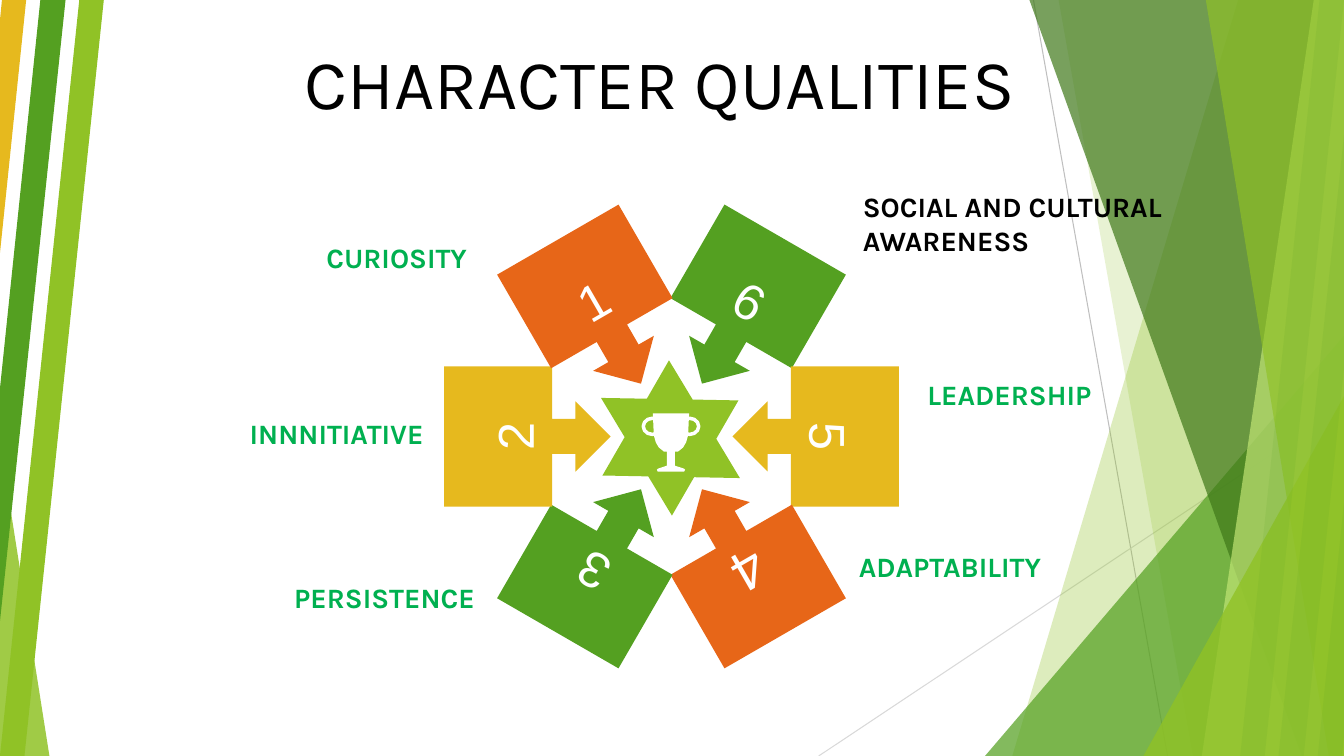
from math import cos, radians, sin

from lxml import etree
from pptx import Presentation
from pptx.dml.color import RGBColor
from pptx.enum.shapes import MSO_CONNECTOR, MSO_SHAPE
from pptx.enum.text import MSO_ANCHOR, PP_ALIGN
from pptx.oxml.ns import qn
from pptx.util import Inches, Pt

STRAIGHT = MSO_CONNECTOR.STRAIGHT
TRIANGLE, PARALLELOGRAM = MSO_SHAPE.ISOSCELES_TRIANGLE, MSO_SHAPE.PARALLELOGRAM
CALLOUT, STAR, OVAL = MSO_SHAPE.DOWN_ARROW_CALLOUT, MSO_SHAPE.STAR_6_POINT, MSO_SHAPE.OVAL
LEFT, CENTER, RIGHT = PP_ALIGN.LEFT, PP_ALIGN.CENTER, PP_ALIGN.RIGHT
TOP, MIDDLE = MSO_ANCHOR.TOP, MSO_ANCHOR.MIDDLE

COLORS = {
    "lime": "90C226", "green": "54A021", "forest": "3F7819", "pale": "C0E474",
    "gold": "E6B91E", "orange": "E76618", "label": "00B050", "black": "000000",
    "white": "FFFFFF", "gray": "BFBFBF", "silver": "D9D9D9",
}

# The grid has one-inch columns and rows
COLUMNS, ROWS = 13.33, 7.5

deck = Presentation()
deck.slide_width, deck.slide_height = Inches(COLUMNS), Inches(ROWS)
page = deck.slides.add_slide(deck.slide_layouts[6])


def add_figure(outline, color, frame=None, opacity=100, adjust=None, rotation=0):
    """Draw a preset shape in a frame, or a polygon from a list of points."""
    if isinstance(outline, list):
        points = [(Inches(x), Inches(y)) for x, y in outline]
        builder = page.shapes.build_freeform(*points[0])
        builder.add_line_segments(points[1:], close=True)
        figure = builder.convert_to_shape()
    else:
        figure = page.shapes.add_shape(outline, *[Inches(n) for n in frame])
    if adjust is not None:
        figure.adjustments[0] = adjust
    figure.rotation = rotation
    figure.shadow.inherit = False
    figure.line.fill.background()
    figure.fill.solid()
    figure.fill.fore_color.rgb = RGBColor.from_string(COLORS[color])
    if opacity < 100:
        tint = figure.element.spPr.find(qn("a:solidFill"))[0]
        etree.SubElement(tint, qn("a:alpha")).set("val", str(opacity * 1000))
    return figure


def add_text(text, frame, size=20, color="label", font="Karla", bold=False,
             align=LEFT, anchor=TOP, rotation=0, before=0):
    box = page.shapes.add_textbox(*[Inches(n) for n in frame])
    box.rotation = rotation
    box.text_frame.word_wrap = True
    box.text_frame.vertical_anchor = anchor
    para = box.text_frame.paragraphs[0]
    para.alignment = align
    para.space_before = Pt(before)
    span = para.add_run()
    span.text = text
    span.font.name, span.font.size, span.font.bold = font, Pt(size), bold
    span.font.color.rgb = RGBColor.from_string(COLORS[color])


# Thin lines behind the right-hand facets
for x1, y1, x2, y2, color in [
    (10.25, 0, 11.58, ROWS, "gray"),
    (COLUMNS, 4.03, 8.12, ROWS, "silver"),
]:
    line = page.shapes.add_connector(STRAIGHT, Inches(x1), Inches(y1), Inches(x2), Inches(y2))
    line.line.width = Pt(0.75)
    line.line.color.rgb = RGBColor.from_string(COLORS[color])
    etree.SubElement(line.element.spPr, qn("a:effectLst"))

# Facets reach the right edge: top corner, bottom corner, or a triangle's left and top
for kind, start, end, color, opacity in [
    ("facet", 12.28, 10.04, "lime", 30),
    ("facet", 10.5, 11.83, "lime", 20),
    ("triangle", 9.77, 3.33, "green", 72),
    ("facet", 10.21, 12.91, "forest", 70),
    ("facet", 13.03, 11.92, "pale", 70),
    ("facet", 11.96, 13.18, "lime", 65),
    ("triangle", 11.34, 3.93, "lime", 80),
]:
    if kind == "triangle":
        add_figure(TRIANGLE, color, (start, end, COLUMNS - start, ROWS - end), opacity, adjust=1)
    else:
        add_figure([(start, 0), (COLUMNS, 0), (COLUMNS, ROWS), (end, ROWS)], color, opacity=opacity)

# Slanted stripes on the left, then the same stripes turned around on the right
add_figure(TRIANGLE, "lime", (0, 4.39, 0.49, 3.11), 85, adjust=0)
stripes = [
    ("green", [(0.4, 0), (0.65, 0), (0, 6.16), (0, 3.85)]),
    ("gold", [(0.02, 0), (0.26, 0), (0, 2.51), (0, 0.2)]),
]
add_figure(PARALLELOGRAM, "lime", (0, 0, 1.03, ROWS), adjust=0.764)
for color, points in stripes:
    add_figure(points, color)
add_figure(PARALLELOGRAM, "green", (COLUMNS - 1.03, 0, 1.03, ROWS), 11, 0.764, 180)
for color, points in stripes:
    add_figure([(COLUMNS - x, ROWS - y) for x, y in points], "green", opacity=11)

# Title and quality labels
add_text("CHARACTER QUALITIES ", (0.77, 0.41, 11.72, 0.79), size=50, color="black",
         align=CENTER, anchor=MIDDLE, before=10)
for text, frame, color, align in [
    ("SOCIAL AND CULTURAL AWARENESS", (8.46, 1.83, 4.16, 0.77), "black", LEFT),
    ("LEADERSHIP", (9.1, 3.7, 3.27, 0.44), "label", LEFT),
    ("ADAPTABILITY", (8.42, 5.4, 4.44, 0.44), "label", LEFT),
    ("CURIOSITY", (1.44, 2.34, 3.29, 0.44), "label", RIGHT),
    ("INNNITIATIVE", (1.01, 4.08, 3.29, 0.44), "label", RIGHT),
    ("PERSISTENCE", (1.03, 5.71, 3.78, 0.44), "label", RIGHT),
]:
    add_text(text, frame, color=color, bold=True, align=align)

# Star ringed by six numbered callouts that point inwards
add_figure(STAR, "lime", (5.99, 3.55, 1.32, 1.59), rotation=300)
HUB_X, HUB_Y = 6.66, 4.33
CALLOUT_RADIUS, NUMBER_RADIUS = 1.43, 1.56
CALLOUT_WIDTH, CALLOUT_HEIGHT, NUMBER_WIDTH = 1.39, 1.65, 1.37
for number, angle, color, size, height in [
    ("6", 30, "green", 36, 0.71),
    ("5", 90, "gold", 36, 0.71),
    ("4", 150, "orange", 40, 0.77),
    ("3", 210, "green", 36, 0.71),
    ("2", 270, "gold", 36, 0.71),
    ("1", 330, "orange", 36, 0.71),
]:
    across, up = sin(radians(angle)), cos(radians(angle))
    add_figure(CALLOUT, color, (HUB_X + CALLOUT_RADIUS * across - CALLOUT_WIDTH / 2,
                                HUB_Y - CALLOUT_RADIUS * up - CALLOUT_HEIGHT / 2,
                                CALLOUT_WIDTH, CALLOUT_HEIGHT), rotation=angle)
    add_text(number, (HUB_X + NUMBER_RADIUS * across - NUMBER_WIDTH / 2,
                      HUB_Y - NUMBER_RADIUS * up - height / 2, NUMBER_WIDTH, height),
             size=size, color="white", font="Arial", align=CENTER, rotation=angle)

# Trophy: two ring handles and a symmetrical cup
for x in (6.38, 6.75):
    handle = add_figure(OVAL, "white", (x, 4.15, 0.18, 0.16))
    handle.fill.background()
    handle.line.color.rgb = RGBColor.from_string(COLORS["white"])
    handle.line.width = Pt(2.5)
CUP_X = 6.655
cup_half = [(0.18, 4.1), (0.17, 4.32), (0.15, 4.39), (0.12, 4.44), (0.07, 4.48), (0.04, 4.48),
            (0.04, 4.62), (0.13, 4.65), (0.14, 4.66), (0.13, 4.68)]
add_figure([(CUP_X + x, y) for x, y in cup_half]
           + [(CUP_X - x, y) for x, y in reversed(cup_half)], "white")

deck.save("out.pptx")
